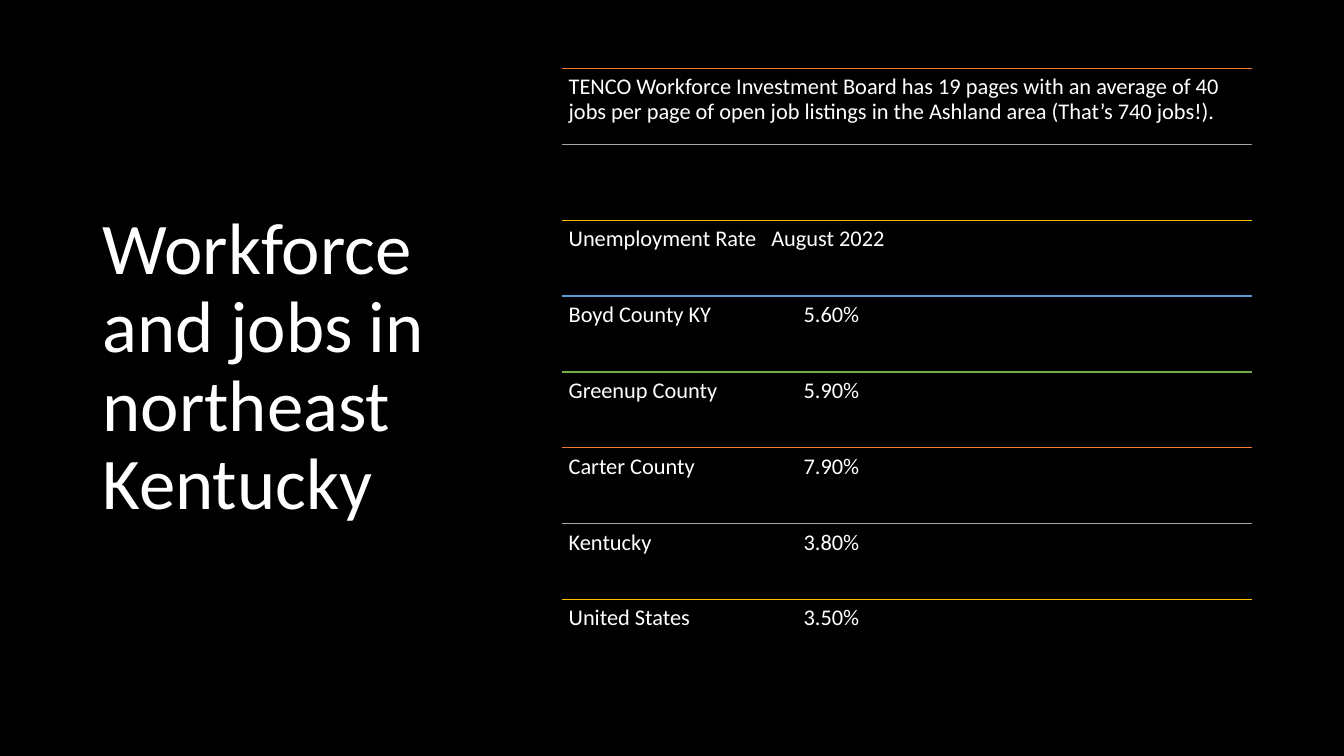
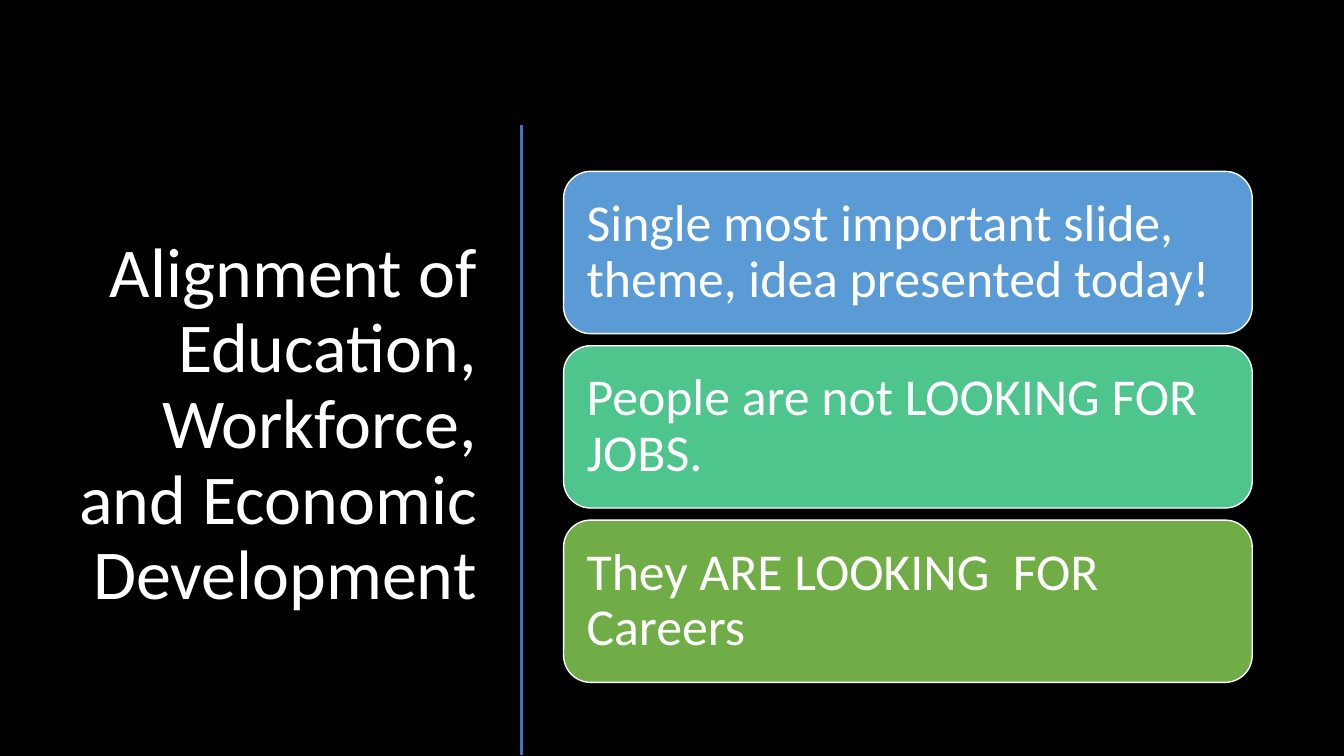
from lxml.etree import SubElement
from pptx import Presentation
from pptx.dml.color import RGBColor
from pptx.enum.shapes import MSO_CONNECTOR, MSO_SHAPE
from pptx.enum.text import MSO_ANCHOR, PP_ALIGN
from pptx.oxml.ns import qn
from pptx.util import Inches, Pt

BLACK = RGBColor(0x00, 0x00, 0x00)
WHITE = RGBColor(0xFF, 0xFF, 0xFF)
ORANGE = RGBColor(0xED, 0x7D, 0x31)
GRAY = RGBColor(0xA5, 0xA5, 0xA5)
GOLD = RGBColor(0xFF, 0xC0, 0x00)
SKY = RGBColor(0x5B, 0x9B, 0xD5)
BLUE = RGBColor(0x44, 0x72, 0xC4)
MINT = RGBColor(0x4D, 0xC5, 0x8D)
GREEN = RGBColor(0x70, 0xAD, 0x47)


class Deck:
    """Shared style plus the slide being built."""

    font = "Calibri"

    def __init__(self):
        self.prs = Presentation()
        self.prs.slide_width = Inches(13.33)
        self.prs.slide_height = Inches(7.5)
        self.slide = None

    def page(self):
        self.slide = self.prs.slides.add_slide(self.prs.slide_layouts[6])
        fill = self.slide.background.fill
        fill.solid()
        fill.fore_color.rgb = BLACK

    def label(self, shape, text, size, align=PP_ALIGN.LEFT,
              anchor=MSO_ANCHOR.MIDDLE, inset=None):
        frame = shape.text_frame
        frame.word_wrap = True
        frame.vertical_anchor = anchor
        if inset is not None:
            frame.margin_left = frame.margin_right = Inches(inset)
            frame.margin_top = frame.margin_bottom = Inches(inset)
        para = frame.paragraphs[0]
        para.alignment = align
        para.line_spacing = 0.9
        run = para.add_run()
        run.text = text
        run.font.name = self.font
        run.font.size = Pt(size)
        run.font.color.rgb = WHITE
        return para

    def box(self, left, top, width, height):
        return self.slide.shapes.add_textbox(
            Inches(left), Inches(top), Inches(width), Inches(height))

    def title(self, text, area, size, align=PP_ALIGN.LEFT):
        self.label(self.box(*area), text, size, align)

    def line(self, x1, y1, x2, y2, color, width):
        line = self.slide.shapes.add_connector(
            MSO_CONNECTOR.STRAIGHT,
            Inches(x1), Inches(y1), Inches(x2), Inches(y2))
        line.line.color.rgb = color
        line.line.width = Pt(width)
        SubElement(line._element.spPr, qn("a:effectLst"))

    def row(self, left, top, width, height, color, text, tab):
        self.line(left, top, left + width, top, color, 1)
        if not text:
            return
        para = self.label(self.box(left, top, width, height), text, 16,
                          anchor=MSO_ANCHOR.TOP, inset=0.07)
        if tab:
            stops = SubElement(para._p.get_or_add_pPr(), qn("a:tabLst"))
            SubElement(stops, qn("a:tab"), pos=str(Inches(tab)), algn="l")

    def card(self, left, top, width, height, color, text):
        card = self.slide.shapes.add_shape(
            MSO_SHAPE.ROUNDED_RECTANGLE,
            Inches(left), Inches(top), Inches(width), Inches(height))
        card.shadow.inherit = False
        card.fill.solid()
        card.fill.fore_color.rgb = color
        card.line.color.rgb = WHITE
        card.line.width = Pt(1)
        self.label(card, text, 37, inset=0.15)


def jobs(deck):
    deck.page()
    deck.title("Workforce and jobs in northeast Kentucky",
               (0.92, 0.61, 3.69, 6.09), 52)

    # Ruled rows: line color, text, tab stop
    rows = [
        (ORANGE, "TENCO Workforce Investment Board has 19 pages with an "
                 "average of 40 jobs per page of open job listings in the "
                 "Ashland area (That’s 740 jobs!).", None),
        (GRAY, "", None),
        (GOLD, "Unemployment Rate\tAugust 2022", 2.01),
        (SKY, "Boyd County KY\t5.60%", 2.33),
        (GREEN, "Greenup County\t5.90%", 2.33),
        (ORANGE, "Carter County\t7.90%", 2.33),
        (GRAY, "Kentucky\t3.80%", 2.33),
        (GOLD, "United States\t3.50%", 2.33),
    ]
    top, end = 0.68, 6.7
    step = (end - top) / len(rows)
    for i, (color, text, tab) in enumerate(rows):
        deck.row(5.57, top + i * step, 6.85, step, color, text, tab)


def align(deck):
    deck.page()
    deck.title("Alignment of Education, Workforce, and Economic Development",
               (0.52, 1.17, 4.31, 6.11), 50, PP_ALIGN.RIGHT)
    deck.line(5.17, 1.24, 5.17, 7.49, BLUE, 2)

    # Stacked cards
    cards = [
        (SKY, "Single most important slide, theme, idea presented today!"),
        (MINT, "People are not LOOKING FOR JOBS."),
        (GREEN, "They ARE LOOKING  FOR Careers"),
    ]
    high, gap = 1.61, 0.12
    for i, (color, text) in enumerate(cards):
        deck.card(5.59, 1.7 + i * (high + gap), 6.83, high, color, text)


def main():
    deck = Deck()
    jobs(deck)
    align(deck)
    deck.prs.save("out.pptx")


if __name__ == "__main__":
    main()
